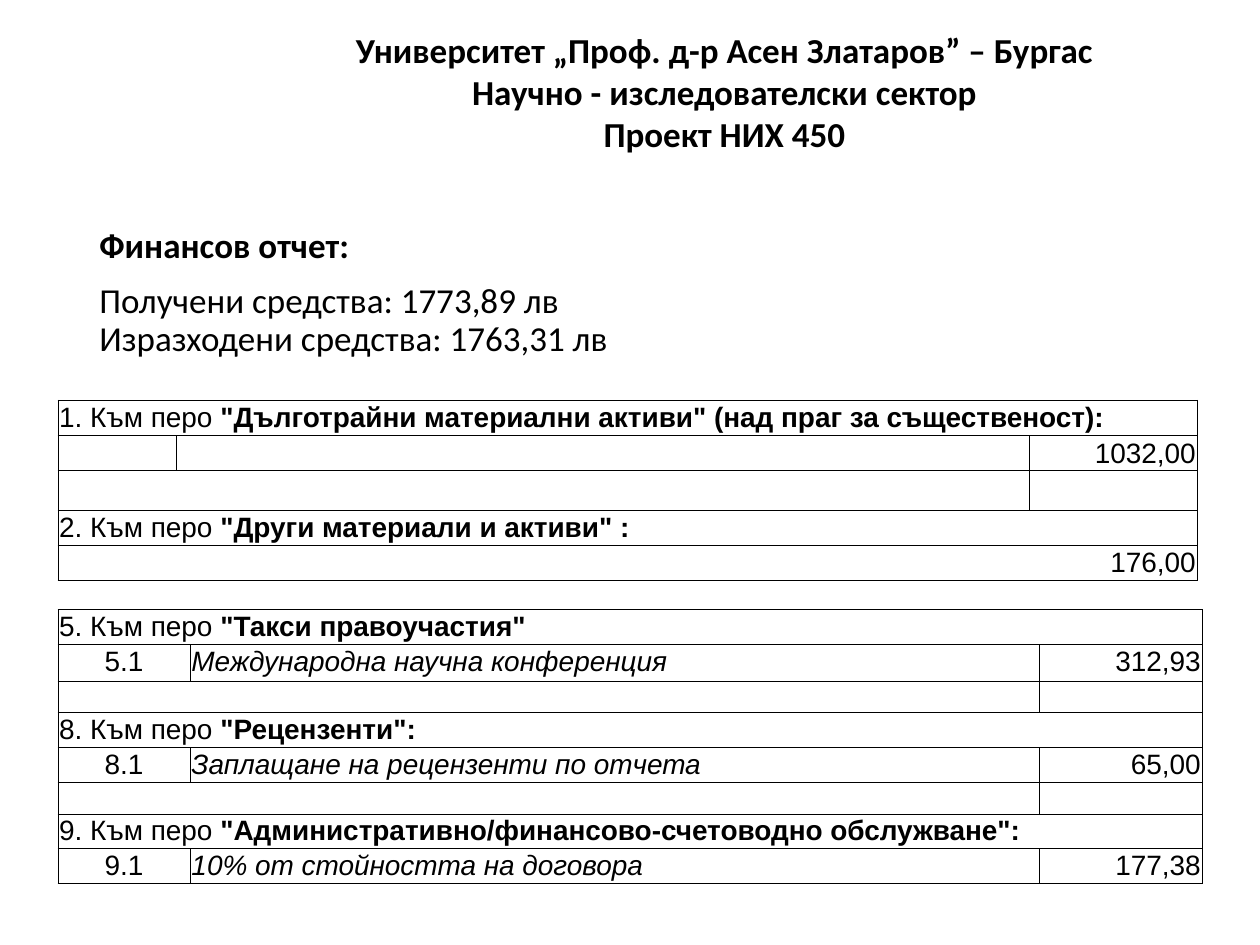
from lxml.etree import SubElement
from pptx import Presentation
from pptx.dml.color import RGBColor
from pptx.enum.text import MSO_ANCHOR, PP_ALIGN
from pptx.oxml.ns import qn
from pptx.util import Inches, Pt

COLORS = {"text": "000000", "border": "000000"}
LEFT, CENTER, RIGHT = PP_ALIGN.LEFT, PP_ALIGN.CENTER, PP_ALIGN.RIGHT


def style_run(r, font, size, bold=False, italic=False):
    r.font.name, r.font.size = font, Pt(size)
    r.font.bold, r.font.italic = bold, italic
    r.font.color.rgb = RGBColor.from_string(COLORS["text"])


def add_text(s, box, lines, align=LEFT, spacing=1.0, before=0):
    """Add a text box from (text, bold) paragraphs."""
    tf = s.shapes.add_textbox(*map(Inches, box)).text_frame
    tf.word_wrap = True
    for i, (text, bold) in enumerate(lines):
        p = tf.add_paragraph() if i else tf.paragraphs[0]
        p.text = text
        p.alignment, p.line_spacing = align, spacing
        if i:
            p.space_before = Pt(before)
        for r in p.runs:
            style_run(r, "Calibri", 20, bold)


def set_borders(cell, sides, top_width):
    tcPr = cell._tc.get_or_add_tcPr()
    for side in "LRTB":
        width = top_width if side == "T" else 0.5
        ln = SubElement(tcPr, qn(f"a:ln{side}"), w=str(Pt(width)))
        if side in sides:
            fill = SubElement(ln, qn("a:solidFill"))
            SubElement(fill, qn("a:srgbClr"), val=COLORS["border"])
        else:
            SubElement(ln, qn("a:noFill"))


def fill_cell(cell, segments, align):
    cell.margin_left = cell.margin_right = cell.margin_top = Inches(0.01)
    cell.margin_bottom = 0
    p = cell.text_frame.paragraphs[0]
    p.alignment = align
    for text, bold, italic in segments:
        r = p.add_run()
        r.text = text
        style_run(r, "Arial", 16, bold, italic)
    if not segments:
        p.font.size = Pt(12)


def item(text="", span=1, align=LEFT, italic=False, sides="LRTB"):
    return span, [(text, False, italic)] if text else [], align, sides


def heading(number, title, span):
    segments = [(f"{number}. Към перо ", False, False), (title, True, False)]
    return span, segments, LEFT, "LRTB"


def add_budget_table(s, left, top, cols, heights, rows, top_width=0.5):
    """Add a bordered table; each row lists (span, segments, align, sides)."""
    frame = s.shapes.add_table(len(rows), len(cols), Inches(left), Inches(top),
                               Inches(sum(cols)), Inches(sum(heights)))
    table = frame.table
    table.first_row = table.horz_banding = False
    for col, width in zip(table.columns, cols):
        col.width = Inches(width)
    for i, (cells, height) in enumerate(zip(rows, heights)):
        table.rows[i].height = Inches(height)
        j = 0
        for span, segments, align, sides in cells:
            for k in range(j, j + span):
                cell = table.cell(i, k)
                set_borders(cell, sides, 0.5 if i else top_width)
                cell.fill.background()
                fill_cell(cell, segments if k == j else [], align)
            if span > 1:
                table.cell(i, j).merge(table.cell(i, j + span - 1))
            j += span
    return table


def add_assets_table(s, left, top):
    edge = item(sides="L")
    rows = [
        [heading(1, '"Дълготрайни материални активи" (над праг за същественост):', 4), edge],
        [item(), item(span=2), item("1032,00", align=RIGHT), edge],
        [item(span=3), item(), edge],
        [heading(2, '"Други материали и активи" :', 4), edge],
        [item(sides="LTB"), item(sides="TB"),
         item("176,00", 2, RIGHT, sides="RTB"), edge],
    ]
    table = add_budget_table(s, left, top, [0.94, 6.07, 0.7, 1.33, 0.04],
                             [0.25, 0.25, 0.32, 0.25, 0.25], rows, top_width=1)
    table.cell(1, 3).vertical_anchor = MSO_ANCHOR.MIDDLE


def add_services_table(s, left, top):
    sections = [
        (5, '"Такси правоучастия"', "Международна научна конференция", "312,93"),
        (8, '"Рецензенти":', "Заплащане на рецензенти по отчета", "65,00"),
        (9, '"Административно/финансово-счетоводно обслужване":',
         "10% от стойността на договора", "177,38"),
    ]
    rows = []
    for number, title, detail, amount in sections:
        if rows:
            rows.append([item(span=2), item()])
        rows.append([heading(number, title, 3)])
        rows.append([item(f"{number}.1", align=CENTER), item(detail, italic=True),
                     item(amount, align=RIGHT)])
    heights = [0.25, 0.29] + [0.25] * 6
    add_budget_table(s, left, top, [1.05, 6.74, 1.29], heights, rows)


def main():
    prs = Presentation()
    prs.slide_width, prs.slide_height = Inches(10), Inches(7.5)
    s = prs.slides.add_slide(prs.slide_layouts[6])
    add_text(s, (1.81, 0.18, 7.88, 1.11), [
        ("Университет „Проф. д-р Асен Златаров” – Бургас", True),
        ("Научно - изследователски сектор", True),
        ("Проект НИХ 450", True),
    ], align=CENTER)
    add_text(s, (0.69, 1.76, 8.62, 5.29), [
        ("Финансов отчет:", True),
        ("Получени средства: 1773,89 лв\vИзразходени средства: 1763,31 лв", False),
    ], spacing=0.9, before=10)
    add_services_table(s, 0.46, 4.84)
    add_assets_table(s, 0.46, 3.18)
    prs.save("out.pptx")


if __name__ == "__main__":
    main()
